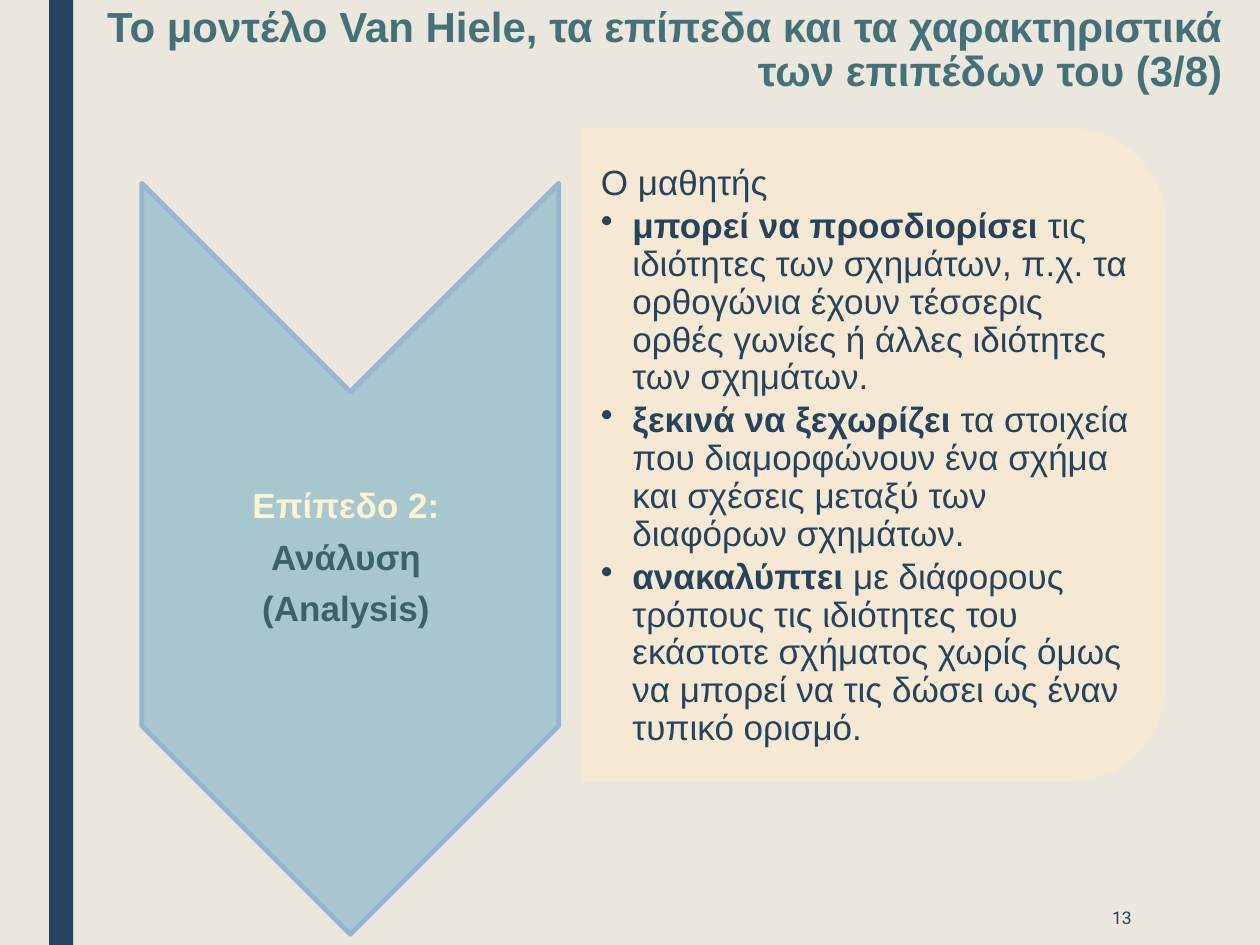
from dataclasses import dataclass

import pptx
import pptx.dml.color
import pptx.enum.shapes
import pptx.enum.text
import pptx.oxml
import pptx.oxml.ns
import pptx.util
from pptx.shapes.autoshape import Shape
from pptx.slide import Slide

Inches = pptx.util.Inches
Pt = pptx.util.Pt
RGBColor = pptx.dml.color.RGBColor
ALIGN = pptx.enum.text.PP_ALIGN
ANCHOR = pptx.enum.text.MSO_ANCHOR
PRESET = pptx.enum.shapes.MSO_SHAPE

CREAM = RGBColor(0xEB, 0xE7, 0xDD)
NAVY = RGBColor(0x26, 0x43, 0x5D)
TEAL = RGBColor(0x43, 0x71, 0x79)
DARK_TEAL = RGBColor(0x3B, 0x62, 0x69)
PALE_TEAL = RGBColor(0xA5, 0xC7, 0xCD)
SKY = RGBColor(0x93, 0xB5, 0xD3)
SAND = RGBColor(0xF8, 0xEA, 0xD4)
IVORY = RGBColor(0xFC, 0xF3, 0xD1)


@dataclass(frozen=True)
class Box:
    left: float
    top: float
    width: float
    height: float

    def lengths(self) -> tuple:
        return tuple(Inches(v) for v in (self.left, self.top, self.width, self.height))


@dataclass(frozen=True)
class Line:
    text: str
    lead: str = ""
    color: RGBColor = NAVY
    bullet: bool = False


def add_block(slide: Slide, preset: int, box: Box, fill: RGBColor, rotation: float = 0) -> Shape:
    block = slide.shapes.add_shape(preset, *box.lengths())
    block.rotation = rotation
    block.shadow.inherit = False
    block.fill.solid()
    block.fill.fore_color.rgb = fill
    block.line.fill.background()
    return block


def set_bullet(paragraph) -> None:
    properties = paragraph._p.get_or_add_pPr()
    properties.set("marL", str(Inches(0.25)))
    properties.set("indent", str(Inches(-0.25)))
    bullet = pptx.oxml.parse_xml(f'<a:buChar {pptx.oxml.ns.nsdecls("a")} char="•"/>')
    properties.append(bullet)


def add_text(slide: Slide, box: Box, lines: list[Line], *, size: float = 20,
             font: str = "Arial", bold: bool = False, align=ALIGN.LEFT,
             anchor=ANCHOR.MIDDLE, spacing: float = 0.9, after: float = 0,
             insets: tuple = (0.01, 0.01, 0.01, 0.01)) -> None:
    frame = slide.shapes.add_textbox(*box.lengths()).text_frame
    frame.word_wrap = True
    frame.vertical_anchor = anchor
    frame.margin_left, frame.margin_top, frame.margin_right, frame.margin_bottom = map(Inches, insets)
    for index, line in enumerate(lines):
        paragraph = frame.add_paragraph() if index else frame.paragraphs[0]
        paragraph.alignment = align
        paragraph.line_spacing = spacing
        paragraph.space_after = Pt(after)
        if line.bullet:
            set_bullet(paragraph)
        for words, strong in ((line.lead, True), (line.text, bold)):
            if words:
                run = paragraph.add_run()
                run.text = words
                run.font.size = Pt(size)
                run.font.name = font
                run.font.bold = strong
                run.font.color.rgb = line.color


def main() -> None:
    deck = pptx.Presentation()
    deck.slide_width, deck.slide_height = Inches(10), Inches(7.5)
    slide = deck.slides.add_slide(deck.slide_layouts[6])
    slide.background.fill.solid()
    slide.background.fill.fore_color.rgb = CREAM

    add_block(slide, PRESET.RECTANGLE, Box(0.39, 0, 0.19, 7.5), NAVY)
    add_text(slide, Box(0.67, 0, 9.13, 0.99),
             [Line("Το μοντέλο Van Hiele, τα επίπεδα και τα χαρακτηριστικά "
                   "των επιπέδων του (3/8)", color=TEAL)],
             size=24, bold=True, align=ALIGN.RIGHT, anchor=ANCHOR.TOP,
             spacing=0.89, insets=(0.1, 0.05, 0.1, 0.05))

    level_arrow = add_block(slide, PRESET.CHEVRON, Box(-0.2, 2.78, 5.96, 3.31), PALE_TEAL, 90)
    level_arrow.line.color.rgb = SKY
    level_arrow.line.width = Pt(2.75)
    add_text(slide, Box(1.13, 3.11, 3.31, 2.65),
             [Line("Επίπεδο 2: ", color=IVORY),
              Line("Ανάλυση ", color=DARK_TEAL),
              Line("(Analysis) ", color=DARK_TEAL)],
             bold=True, align=ALIGN.CENTER, after=8)

    traits_panel = add_block(slide, PRESET.ROUND_2_SAME_RECTANGLE,
                             Box(4.34, 1.29, 5.19, 4.64), SAND, 90)
    panel_color = traits_panel.fill._xPr.find(".//" + pptx.oxml.ns.qn("a:srgbClr"))
    panel_color.append(pptx.oxml.parse_xml(
        f'<a:alpha {pptx.oxml.ns.nsdecls("a")} val="90000"/>'))
    add_text(slide, Box(4.61, 1.26, 4.41, 4.73),
             [Line("Ο μαθητής"),
              Line("τις ιδιότητες των σχημάτων, π.χ. τα ορθογώνια έχουν τέσσερις "
                   "ορθές γωνίες ή άλλες ιδιότητες των σχημάτων.",
                   lead="μπορεί να προσδιορίσει ", bullet=True),
              Line("τα στοιχεία που διαμορφώνουν ένα σχήμα και σχέσεις μεταξύ "
                   "των διαφόρων σχημάτων.",
                   lead="ξεκινά να ξεχωρίζει ", bullet=True),
              Line("με διάφορους τρόπους τις ιδιότητες του εκάστοτε σχήματος χωρίς "
                   "όμως να μπορεί να τις δώσει ως έναν τυπικό ορισμό.",
                   lead="ανακαλύπτει ", bullet=True)],
             after=3, insets=(0.16, 0.01, 0.01, 0.01))

    add_text(slide, Box(7.77, 7.06, 1.31, 0.44), [Line("13")], size=10, font="Roboto",
             align=ALIGN.RIGHT, spacing=1.0, insets=(0.1, 0.05, 0.1, 0.05))
    deck.save("out.pptx")


if __name__ == "__main__":
    main()
